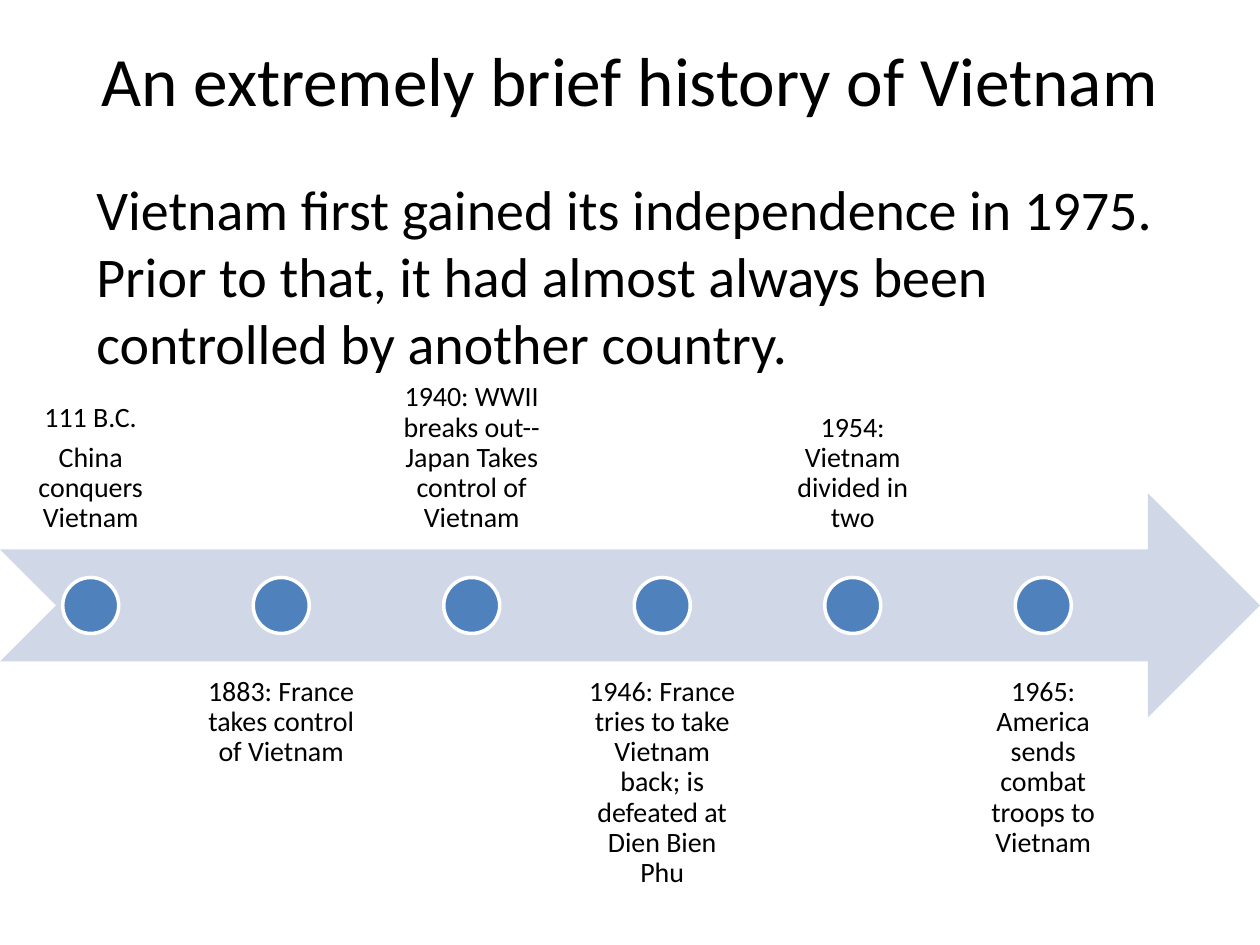
import pptx
import pptx.util
from pptx.dml.color import RGBColor
from pptx.enum.shapes import MSO_SHAPE
from pptx.enum.text import MSO_ANCHOR, PP_ALIGN

Pt = pptx.util.Pt

COLORS = {
    "text": "000000",
    "band": "D0D8E8",
    "marker": "4F81BD",
    "outline": "FFFFFF",
}

EVENTS = [
    "111 B.C.\nChina conquers Vietnam",
    "1883: France takes control of Vietnam",
    "1940: WWII breaks out--Japan Takes control of Vietnam",
    "1946: France tries to take Vietnam back; is defeated at Dien Bien Phu",
    "1954: Vietnam divided in two",
    "1965: America sends combat troops to Vietnam",
]


def add_text(slide, text, left, top, width, height, *, size,
             align=PP_ALIGN.LEFT, anchor=MSO_ANCHOR.TOP,
             inset_x=7.2, inset_y=3.6, line_spacing=1.0, space_after=0):
    box = slide.shapes.add_textbox(Pt(left), Pt(top), Pt(width), Pt(height))
    frame = box.text_frame
    frame.word_wrap = True
    frame.vertical_anchor = anchor
    frame.margin_left = frame.margin_right = Pt(inset_x)
    frame.margin_top = frame.margin_bottom = Pt(inset_y)
    frame.text = text
    for paragraph in frame.paragraphs:
        paragraph.alignment = align
        paragraph.line_spacing = line_spacing
        paragraph.space_after = Pt(space_after)
        for run in paragraph.runs:
            run.font.name = "Calibri"
            run.font.size = Pt(size)
            run.font.color.rgb = RGBColor.from_string(COLORS["text"])


def add_figure(slide, preset, left, top, width, height, fill, outline=None):
    figure = slide.shapes.add_shape(
        preset, Pt(left), Pt(top), Pt(width), Pt(height))
    figure.shadow.inherit = False
    figure.fill.solid()
    figure.fill.fore_color.rgb = RGBColor.from_string(COLORS[fill])
    if outline:
        figure.line.color.rgb = RGBColor.from_string(COLORS[outline])
        figure.line.width = Pt(2)
    else:
        figure.line.fill.background()


def add_heading(slide, left, top, width, height):
    add_text(slide, "An extremely brief history of Vietnam",
             left, top, width, height, size=39.6,
             align=PP_ALIGN.CENTER, anchor=MSO_ANCHOR.MIDDLE)


def add_introduction(slide, left, top, width, height):
    add_text(slide,
             "Vietnam first gained its independence in 1975. Prior to that, "
             "it had almost always been controlled by another country.",
             left, top, width, height, size=32)


def add_timeline(slide, left, top, width, height):
    band_height = height * 0.4
    band_top = top + height * 0.3
    label_height = band_height
    marker_size = band_height / 4
    marker_top = band_top + (band_height - marker_size) / 2
    gap_ratio = 0.05
    count = len(EVENTS)
    label_width = width * 0.9 / (count + (count - 1) * gap_ratio)
    step = label_width * (1 + gap_ratio)

    add_figure(slide, MSO_SHAPE.NOTCHED_RIGHT_ARROW,
               left, band_top, width, band_height, "band")
    for index, event in enumerate(EVENTS):
        label_left = left + index * step
        above = index % 2 == 0
        label_top = top if above else top + height - label_height
        add_text(slide, event, label_left, label_top, label_width, label_height,
                 size=16, align=PP_ALIGN.CENTER,
                 anchor=MSO_ANCHOR.BOTTOM if above else MSO_ANCHOR.TOP,
                 inset_x=8.96, inset_y=8.96, line_spacing=0.9, space_after=5.6)
        add_figure(slide, MSO_SHAPE.OVAL,
                   label_left + (label_width - marker_size) / 2, marker_top,
                   marker_size, marker_size, "marker", "outline")


def main():
    presentation = pptx.Presentation()
    presentation.slide_width = Pt(720)
    presentation.slide_height = Pt(540)
    slide = presentation.slides.add_slide(presentation.slide_layouts[6])
    add_heading(slide, 36, 0, 648, 90)
    add_introduction(slide, 48, 96, 648, 356)
    add_timeline(slide, 0, 186, 720, 320)
    presentation.save("out.pptx")


if __name__ == "__main__":
    main()
